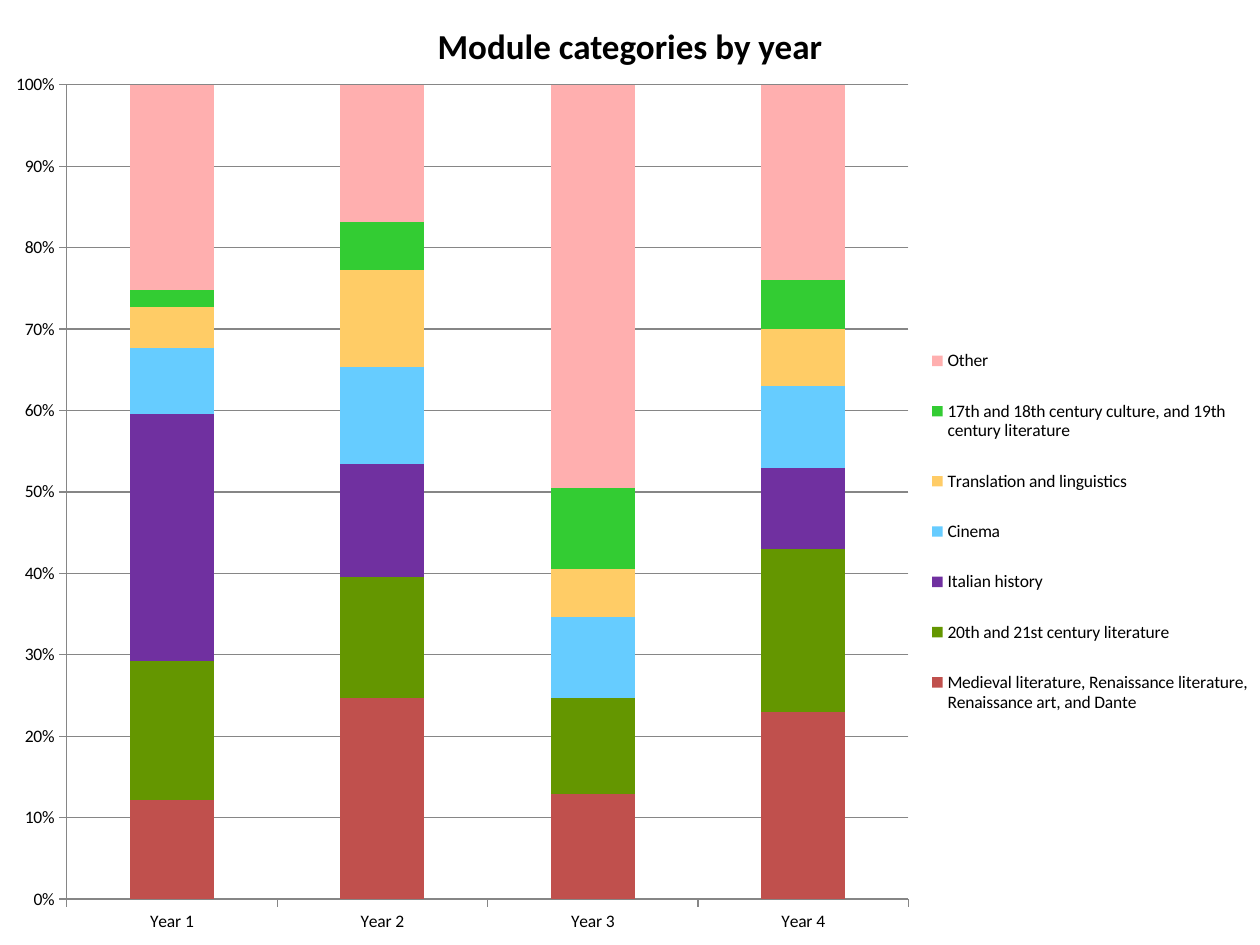
import pptx
import pptx.chart.data
import pptx.dml.color
import pptx.enum.chart
import pptx.enum.text
import pptx.oxml
import pptx.oxml.ns
import pptx.util
from dataclasses import dataclass

Inches = pptx.util.Inches
Pt = pptx.util.Pt
enums = pptx.enum.chart


@dataclass
class Theme:
    face: str = "Calibri"
    ink: str = "000000"
    rule: str = "868686"
    head: int = 20
    body: int = 10


YEARS = ["Year 1", "Year 2", "Year 3", "Year 4"]
SERIES = [
    ("Medieval literature, Renaissance literature, Renaissance art, and Dante",
     (12, 25, 13, 23), "C0504D"),
    ("20th and 21st century literature", (17, 15, 12, 20), "649600"),
    ("Italian history", (30, 14, None, 10), "7030A0"),
    ("Cinema", (8, 12, 10, 10), "66CCFF"),
    ("Translation and linguistics", (5, 12, 6, 7), "FFCC66"),
    ("17th and 18th century culture, and 19th century literature",
     (2, 6, 10, 6), "33CC33"),
    ("Other", (25, 17, 50, 24), "FFAFAF"),
]


def color(code):
    return pptx.dml.color.RGBColor.from_string(code)


def place(node, box, after=None, inner=False):
    """Give a chart part a fixed box, in fractions of the chart."""
    for old in node.findall(pptx.oxml.ns.qn("c:layout")):
        node.remove(old)
    target = '<c:layoutTarget val="inner"/>' if inner else ""
    modes = "".join(f'<c:{side}Mode val="edge"/>' for side in "xy")
    sizes = "".join(f'<c:{key} val="{val}"/>' for key, val in zip("xywh", box))
    layout = pptx.oxml.parse_xml(
        f'<c:layout {pptx.oxml.ns.nsdecls("c")}><c:manualLayout>'
        f'{target}{modes}{sizes}</c:manualLayout></c:layout>')
    if after is None:
        node.insert(0, layout)
    else:
        after.addnext(layout)


class Deck:
    def __init__(self, theme):
        self.theme = theme
        self.file = pptx.Presentation()
        self.file.slide_width = Inches(10)
        self.file.slide_height = Inches(7.5)
        self.slide = self.file.slides.add_slide(self.file.slide_layouts[6])

    def style(self, font, size, bold=False):
        font.name = self.theme.face
        font.size = Pt(size)
        font.bold = bold
        font.color.rgb = color(self.theme.ink)

    def title(self, words, box):
        frame = self.slide.shapes.add_textbox(*map(Inches, box)).text_frame
        frame.word_wrap = True
        frame.vertical_anchor = pptx.enum.text.MSO_ANCHOR.MIDDLE
        para = frame.paragraphs[0]
        para.text = words
        para.alignment = pptx.enum.text.PP_ALIGN.CENTER
        self.style(para.font, self.theme.head, bold=True)

    def chart(self, cats, series, box, plot, key):
        data = pptx.chart.data.CategoryChartData()
        data.categories = cats
        for name, vals, _ in series:
            data.add_series(name, vals)
        chart = self.slide.shapes.add_chart(
            enums.XL_CHART_TYPE.COLUMN_STACKED_100,
            *map(Inches, box), data).chart
        self.style(chart.font, self.theme.body)
        chart.has_title = False

        bars = chart.plots[0]
        bars.gap_width, bars.overlap = 150, 100
        bars.vary_by_categories = False
        for part, (_, _, code) in zip(bars.series, series):
            part.format.fill.solid()
            part.format.fill.fore_color.rgb = color(code)

        rows = chart.value_axis
        rows.has_major_gridlines = True
        rows.minimum_scale, rows.maximum_scale, rows.major_unit = 0, 1, 0.1
        rows.tick_labels.number_format = "0%"
        rows.tick_labels.number_format_is_linked = False
        for axis in (chart.category_axis, rows):
            axis.major_tick_mark = enums.XL_TICK_MARK.OUTSIDE
            axis.minor_tick_mark = enums.XL_TICK_MARK.NONE
        for item in (chart.category_axis, rows, rows.major_gridlines):
            item.format.line.color.rgb = color(self.theme.rule)
            item.format.line.width = Pt(0.75)

        chart.has_legend = True
        legend = chart.legend
        legend.position = enums.XL_LEGEND_POSITION.RIGHT
        legend.include_in_layout = False
        self.style(legend.font, self.theme.body)
        root = chart.element
        area = root.find(".//" + pptx.oxml.ns.qn("c:plotArea"))
        place(area, plot, inner=True)
        node = root.find(".//" + pptx.oxml.ns.qn("c:legend"))
        place(node, key, after=node.find(pptx.oxml.ns.qn("c:legendPos")))


def main():
    deck = Deck(Theme())
    deck.title("Module categories by year", (0.51, -0.04, 8.98, 0.8))
    deck.chart(YEARS, SERIES, box=(0, 0.52, 10, 6.98),
               plot=(0.053, 0.022, 0.668, 0.926),
               key=(0.73, 0.29, 0.27, 0.48))
    deck.file.save("out.pptx")


if __name__ == "__main__":
    main()
